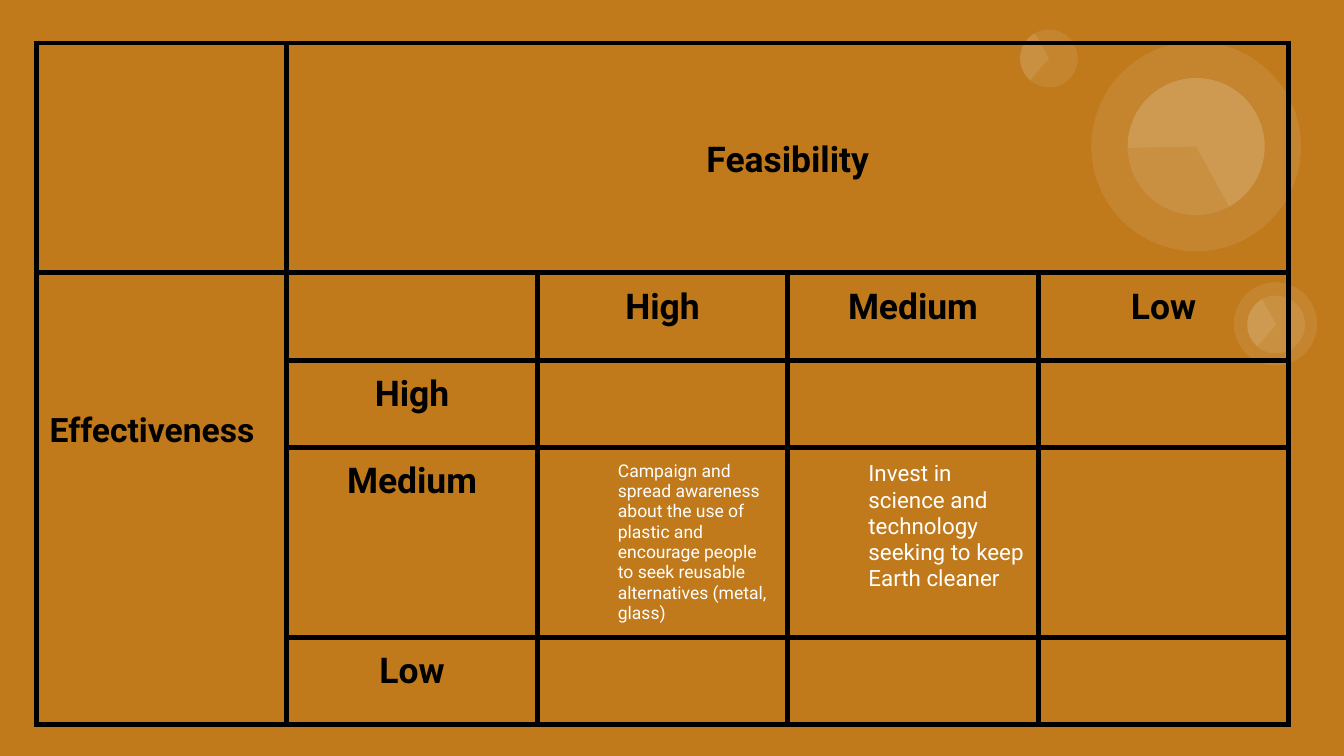
"""Build a feasibility and effectiveness matrix slide."""
from lxml.etree import SubElement
from pptx import Presentation
from pptx.dml.color import RGBColor
from pptx.enum.shapes import MSO_SHAPE
from pptx.enum.text import MSO_ANCHOR, PP_ALIGN
from pptx.oxml import parse_xml
from pptx.oxml.ns import nsdecls, qn
from pptx.util import Inches, Pt

COLORS = {"background": "C0791B", "white": "FFFFFF", "black": "000000"}

prs = Presentation()
prs.slide_width, prs.slide_height = Inches(10), Inches(10 * 9 / 16)
slide = prs.slides.add_slide(prs.slide_layouts[6])
slide.background.fill.solid()
slide.background.fill.fore_color.rgb = RGBColor.from_string(COLORS["background"])

bubbles = [
    (8.39, 0.58, 1.02, 215.9, None),
    (8.39, 0.58, 1.02, 215.9, (193.77, 123.14)),
    (8.12, 0.31, 1.56, 215.8, None),
    (9.18, 2.1, 0.62, 35.9, None),
    (9.28, 2.2, 0.43, 35.8, None),
    (9.28, 2.2, 0.43, 35.8, (57, 123.14)),
    (7.59, 0.22, 0.43, 35.8, None),
    (7.59, 0.22, 0.43, 35.8, (57, 123.14)),
]
for left, top, size, rotation, angles in bubbles:
    kind = MSO_SHAPE.PIE if angles else MSO_SHAPE.OVAL
    s = slide.shapes.add_shape(kind, Inches(left), Inches(top), Inches(size), Inches(size))
    if angles:
        s.adjustments[0], s.adjustments[1] = angles
    s.rotation = rotation
    s.shadow.inherit = False
    s.line.fill.background()
    s.fill.solid()
    s.fill.fore_color.rgb = RGBColor.from_string(COLORS["white"])
    color = s._element.spPr.find(qn("a:solidFill")).find(qn("a:srgbClr"))
    SubElement(color, qn("a:alpha"), val="9000")

row_heights = [1.71, 0.65, 0.65, 1.41, 0.65]
table_width = 9.32
table = slide.shapes.add_table(
    5, 5, Inches(0.27), Inches(0.32), Inches(table_width), Inches(sum(row_heights))
).table
table.first_row = table.horz_banding = False
for column in table.columns:
    column.width = Inches(table_width / 5)
for row, height in zip(table.rows, row_heights):
    row.height = Inches(height)

for cell in table.iter_cells():
    cell.margin_left = cell.margin_right = Inches(0.1)
    cell.margin_top = cell.margin_bottom = Inches(0.1)
    cell.fill.background()
    tcPr = cell._tc.get_or_add_tcPr()
    for i, side in enumerate(("lnL", "lnR", "lnT", "lnB")):
        tcPr.insert(i, parse_xml(
            f'<a:{side} {nsdecls("a")} w="{Pt(3)}"><a:solidFill>'
            f'<a:srgbClr val="{COLORS["black"]}"/></a:solidFill></a:{side}>'
        ))

table.cell(0, 1).merge(table.cell(0, 4))
table.cell(1, 0).merge(table.cell(4, 0))
table.cell(0, 1).vertical_anchor = MSO_ANCHOR.MIDDLE
table.cell(0, 1).margin_top = Inches(0.14)
table.cell(1, 0).margin_top = Inches(1.03)

headings = {(0, 1): "Feasibility", (1, 0): "Effectiveness"}
for i, level in enumerate(("High", "Medium", "Low")):
    headings[1, i + 2] = headings[i + 2, 1] = level
actions = {
    (3, 2): ("Campaign and spread awareness about the use of plastic and encourage "
             "people to seek reusable alternatives (metal, glass)", 9.4),
    (3, 3): ("Invest in science and technology seeking to keep Earth cleaner", 12),
}
entries = [(at, text, 18 if at == (1, 0) else 19, "black") for at, text in headings.items()]
entries += [(at, text, size, "white") for at, (text, size) in actions.items()]

for at, text, size, color in entries:
    p = table.cell(*at).text_frame.paragraphs[0]
    p.text = text
    if at in actions:
        p._p.get_or_add_pPr().set("marL", str(Inches(0.5)))
        p._p.get_or_add_pPr().set("indent", "0")
    elif at != (1, 0):
        p.alignment = PP_ALIGN.CENTER
    r = p.runs[0]
    r.font.name = "Roboto"
    r.font.size = Pt(size)
    r.font.bold = at in headings
    r.font.color.rgb = RGBColor.from_string(COLORS[color])

prs.save("out.pptx")
